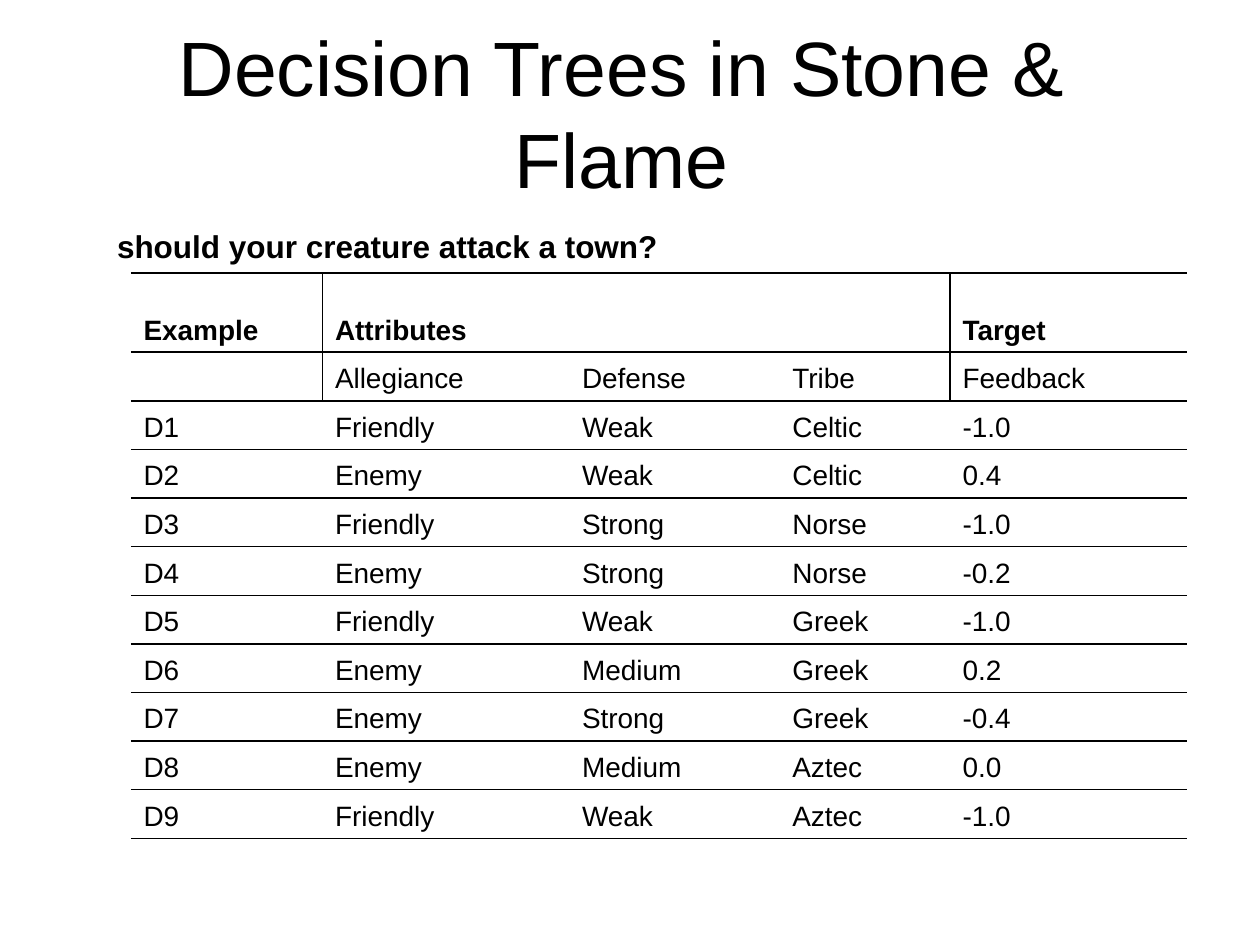
from lxml.etree import SubElement
from pptx import Presentation
from pptx.dml.color import RGBColor
from pptx.enum.text import MSO_ANCHOR as Anchor, PP_ALIGN as Align
from pptx.oxml.ns import qn
from pptx.util import Cm, Pt

COLUMN_WIDTHS = [3.86, 4.98, 4.24, 3.43, 4.78]
HEADING_HEIGHT, ROW_HEIGHT = 1.6, 0.98
HEADING_ROWS = 2
GROUP_ENDS = (0, 3)  # columns with a rule on their right in the heading rows

ROWS = [
    ["Example", "Attributes", "", "", "Target"],
    ["", "Allegiance", "Defense", "Tribe", "Feedback"],
    ["D1", "Friendly", "Weak", "Celtic", "-1.0"],
    ["D2", "Enemy", "Weak", "Celtic", "0.4"],
    ["D3", "Friendly", "Strong", "Norse", "-1.0"],
    ["D4", "Enemy", "Strong", "Norse", "-0.2"],
    ["D5", "Friendly", "Weak", "Greek", "-1.0"],
    ["D6", "Enemy", "Medium", "Greek", "0.2"],
    ["D7", "Enemy", "Strong", "Greek", "-0.4"],
    ["D8", "Enemy", "Medium", "Aztec", "0.0"],
    ["D9", "Friendly", "Weak", "Aztec", "-1.0"],
]


def color(value):
    return RGBColor.from_string(value)


def apply(target, values):
    for name, value in values.items():
        setattr(target, name, value)


class SlideBuilder:
    font = "Arial"
    ink = "000000"
    rule_width = Pt(1)
    hanging_indent = Cm(1.25)

    def __init__(self, slide):
        self.slide = slide

    def add_styled_run(self, paragraph, text, size, bold=False):
        run = paragraph.add_run()
        run.text = text
        apply(run.font, {"name": self.font, "size": Pt(size), "bold": bold})
        run.font.color.rgb = color(self.ink)

    def text(self, text, box, size, bold=False, align=Align.LEFT, **frame_format):
        shape = self.slide.shapes.add_textbox(*map(Cm, box))
        apply(shape.text_frame, frame_format)
        paragraph = shape.text_frame.paragraphs[0]
        paragraph.alignment = align
        self.add_styled_run(paragraph, text, size, bold)

    def border(self, cell, visible_sides):
        """Rule the given sides (of L, R, T, B) and clear the others."""
        properties = cell._tc.get_or_add_tcPr()
        for side in "LRTB":
            line = SubElement(properties, qn(f"a:ln{side}"), w=str(self.rule_width))
            if side in visible_sides:
                fill = SubElement(line, qn("a:solidFill"))
                SubElement(fill, qn("a:srgbClr"), val=self.ink)
            else:
                SubElement(line, qn("a:noFill"))

    def cell(self, cell, text, size, bold, sides):
        self.border(cell, sides)
        cell.fill.background()
        cell.vertical_anchor = Anchor.BOTTOM
        paragraph = cell.text_frame.paragraphs[0]
        if text:
            indent = paragraph._p.get_or_add_pPr()
            indent.set("marL", str(self.hanging_indent))
            indent.set("indent", str(-self.hanging_indent))
            self.add_styled_run(paragraph, text, size, bold)
        else:  # keeps an empty cell from stretching its row
            SubElement(paragraph._p, qn("a:endParaRPr"), sz=str(size * 100))

    def table(self, rows, left, top, size):
        heights = [HEADING_HEIGHT] + [ROW_HEIGHT] * (len(rows) - 1)
        table = self.slide.shapes.add_table(
            len(rows), len(COLUMN_WIDTHS), Cm(left), Cm(top),
            Cm(sum(COLUMN_WIDTHS)), Cm(sum(heights))).table
        apply(table, {"first_row": False, "horz_banding": False})
        for column, width in zip(table.columns, COLUMN_WIDTHS):
            column.width = Cm(width)
        for i, (row, height) in enumerate(zip(rows, heights)):
            table.rows[i].height = Cm(height)
            for j, text in enumerate(row):
                sides = "TB"
                if i < HEADING_ROWS:
                    sides += "R" if j in GROUP_ENDS else ""
                    sides += "L" if j - 1 in GROUP_ENDS else ""
                self.cell(table.cell(i, j), text, size, i == 0, sides)


def main():
    presentation = Presentation()
    apply(presentation, {"slide_width": Cm(25.4), "slide_height": Cm(19.05)})
    builder = SlideBuilder(presentation.slides.add_slide(presentation.slide_layouts[6]))
    builder.text("Decision Trees in Stone & Flame", (2.59, 0.28, 19.89, 3.94), 44,
                 align=Align.CENTER, word_wrap=True, vertical_anchor=Anchor.MIDDLE)
    builder.table(ROWS, 2.64, 5.5, 16)
    builder.text("should your creature attack a town?", (2.11, 4.45, 11.53, 1.02), 18,
                 bold=True, word_wrap=False)
    presentation.save("out.pptx")


if __name__ == "__main__":
    main()
